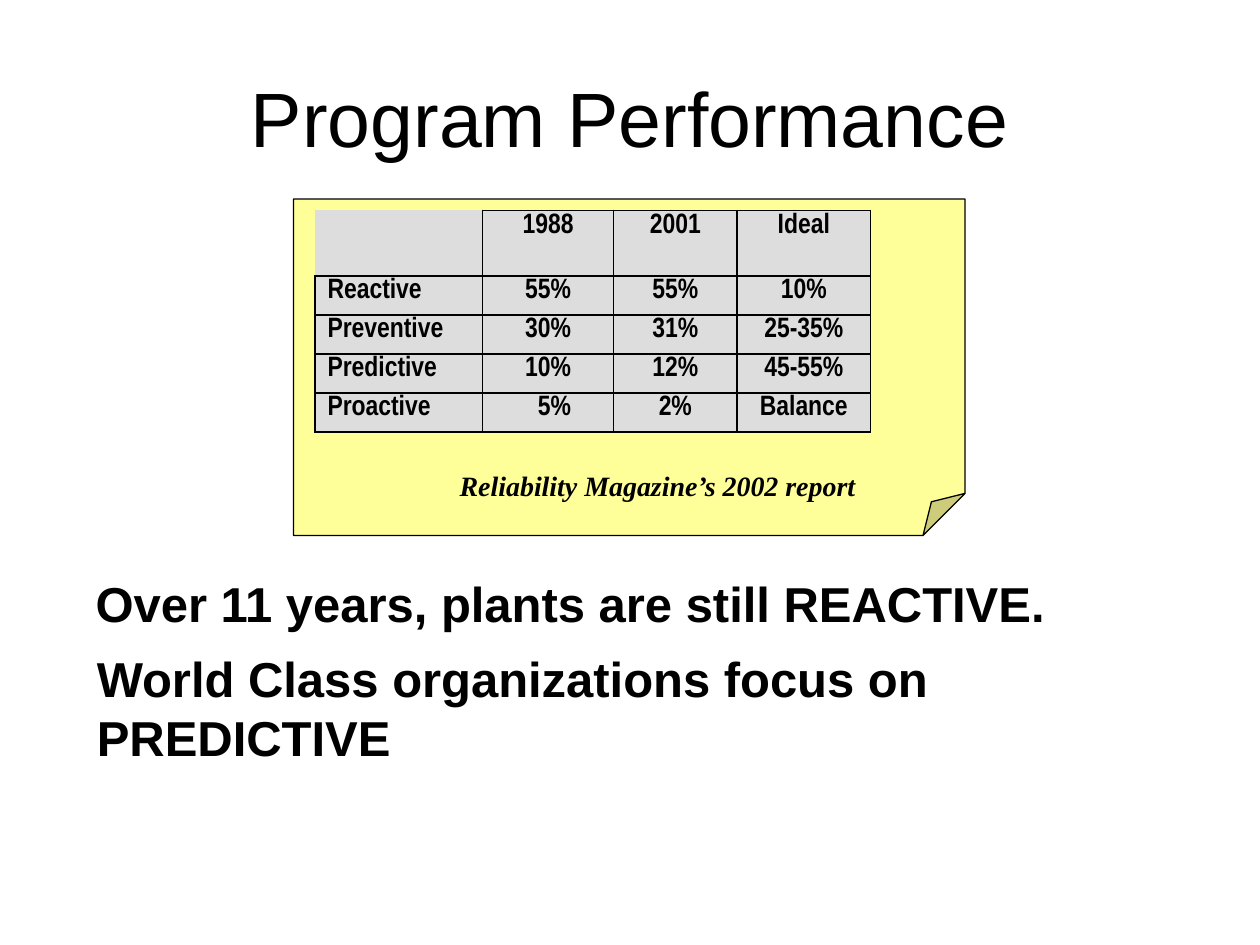
from pptx import Presentation
from pptx.dml.color import RGBColor
from pptx.enum.shapes import MSO_SHAPE
from pptx.enum.text import MSO_ANCHOR, MSO_AUTO_SIZE, PP_ALIGN
from pptx.oxml.ns import qn
from pptx.util import Inches, Pt
from lxml.etree import SubElement

BLACK = RGBColor(0x00, 0x00, 0x00)
NOTE_YELLOW = RGBColor(0xFF, 0xFF, 0x99)
CELL_GRAY = RGBColor(0xDD, 0xDD, 0xDD)

TITLE_FONT = {"name": "Arial", "size": Pt(44), "bold": False}
TABLE_FONT = {"name": "Arial Narrow", "size": Pt(16), "bold": True}
SOURCE_FONT = {"name": "Times New Roman", "size": Pt(16), "bold": True, "italic": True}
MESSAGE_FONT = {"name": "Arial", "size": Pt(28), "bold": True}

PROGRAM_ROWS = [
    ["", "1988", "2001", "Ideal"],
    ["Reactive", "55%", "55%", "10%"],
    ["Preventive", "30%", "31%", "25-35%"],
    ["Predictive", "10%", "12%", "45-55%"],
    ["Proactive", "5%", "2%", "Balance"],
]
COLUMN_WIDTHS = [1.33, 1.04, 0.98, 1.06]
ROW_HEIGHTS = [0.52] + [0.31] * 4


def write_text(text_frame, text, font, alignment=PP_ALIGN.LEFT):
    paragraph = text_frame.paragraphs[0]
    paragraph.text = text
    paragraph.alignment = alignment
    for name, value in font.items():
        setattr(paragraph.font, name, value)
    paragraph.font.color.rgb = BLACK


def set_title(slide, text):
    title = slide.shapes.title
    title.left, title.top = Inches(0.5), Inches(0.3)
    title.width, title.height = Inches(9), Inches(1.25)
    title.text_frame.vertical_anchor = MSO_ANCHOR.MIDDLE
    write_text(title.text_frame, text, TITLE_FONT, PP_ALIGN.CENTER)


def add_note(slide):
    note = slide.shapes.add_shape(
        MSO_SHAPE.FOLDED_CORNER, Inches(2.33), Inches(1.58), Inches(5.33), Inches(2.67))
    # The size of the fold is an adjustment that only XML can reach
    adjustments = next(note._element.iter(qn("a:avLst")))
    SubElement(adjustments, qn("a:gd"), name="adj", fmla="val 12500")
    note.shadow.inherit = False
    note.fill.solid()
    note.fill.fore_color.rgb = NOTE_YELLOW
    note.line.color.rgb = BLACK
    note.line.width = Pt(0.75)


def set_borders(cell, hidden=()):
    properties = cell._tc.get_or_add_tcPr()
    for side in ("lnL", "lnR", "lnT", "lnB"):
        border = SubElement(properties, qn(f"a:{side}"), w=str(Pt(1)))
        if side in hidden:
            SubElement(border, qn("a:noFill"))
        else:
            fill = SubElement(border, qn("a:solidFill"))
            SubElement(fill, qn("a:srgbClr"), val=str(BLACK))


def format_cell(cell, text, alignment, hidden):
    set_borders(cell, hidden)
    cell.fill.solid()
    cell.fill.fore_color.rgb = CELL_GRAY
    cell.margin_top = cell.margin_bottom = Inches(0.02)
    write_text(cell.text_frame, text, TABLE_FONT, alignment)


def add_program_table(slide):
    table = slide.shapes.add_table(
        len(ROW_HEIGHTS), len(COLUMN_WIDTHS), Inches(2.5), Inches(1.67),
        Inches(sum(COLUMN_WIDTHS)), Inches(sum(ROW_HEIGHTS))).table
    for column, width in zip(table.columns, COLUMN_WIDTHS):
        column.width = Inches(width)
    for row, height in zip(table.rows, ROW_HEIGHTS):
        row.height = Inches(height)
    for row_index, values in enumerate(PROGRAM_ROWS):
        for column_index, value in enumerate(values):
            # The empty corner cell has no outer border
            hidden = ("lnL", "lnT") if row_index == column_index == 0 else ()
            alignment = PP_ALIGN.CENTER if column_index else PP_ALIGN.LEFT
            format_cell(table.cell(row_index, column_index), value, alignment, hidden)
    # The single-digit share lines up with the numbers above it
    table.cell(4, 1).margin_left = Inches(0.2)


def add_text(slide, text, font, left, top, width, height, wrap=True, anchor=MSO_ANCHOR.TOP):
    box = slide.shapes.add_textbox(Inches(left), Inches(top), Inches(width), Inches(height))
    box.text_frame.word_wrap = wrap
    box.text_frame.auto_size = MSO_AUTO_SIZE.SHAPE_TO_FIT_TEXT
    box.text_frame.vertical_anchor = anchor
    write_text(box.text_frame, text, font)


def main():
    presentation = Presentation()
    presentation.slide_width, presentation.slide_height = Inches(10), Inches(7.5)
    slide = presentation.slides.add_slide(presentation.slide_layouts[5])

    # Title and note with the survey figures
    set_title(slide, "Program Performance")
    add_note(slide)
    add_program_table(slide)
    add_text(slide, "Reliability Magazine’s 2002 report", SOURCE_FONT,
             3.55, 3.67, 3.43, 0.37, wrap=False, anchor=MSO_ANCHOR.MIDDLE)

    # Conclusions
    add_text(slide, "Over 11 years, plants are still REACTIVE.", MESSAGE_FONT,
             0.66, 4.5, 8.42, 0.5)
    add_text(slide, "World Class organizations focus on PREDICTIVE", MESSAGE_FONT,
             0.67, 5.1, 9.08, 0.5)

    presentation.save("out.pptx")


if __name__ == "__main__":
    main()
